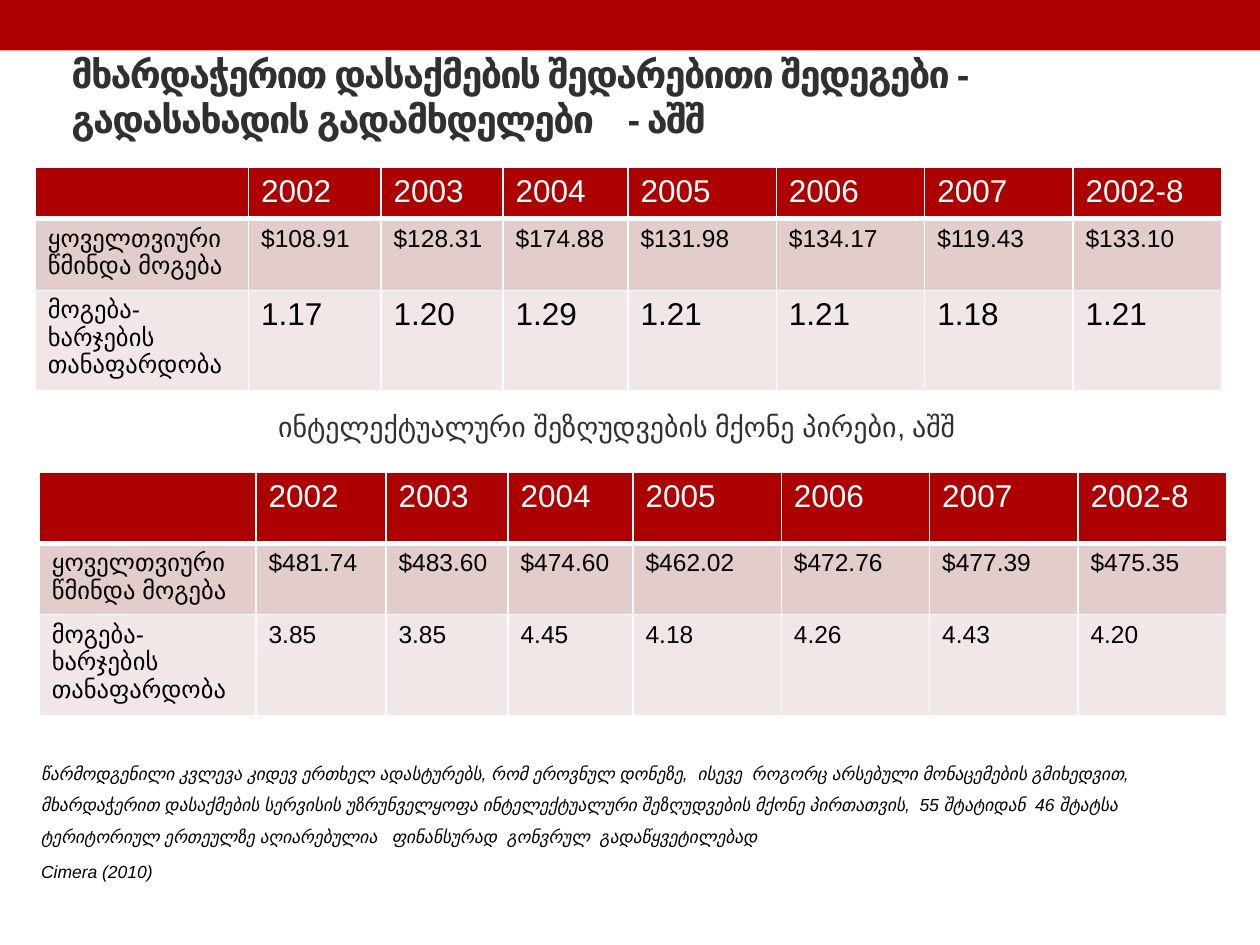
from lxml import etree
from pptx import Presentation
from pptx.dml.color import RGBColor
from pptx.enum.shapes import MSO_SHAPE
from pptx.enum.text import MSO_ANCHOR
from pptx.oxml.ns import qn
from pptx.util import Cm, Pt

RECT = MSO_SHAPE.RECTANGLE
MIDDLE = MSO_ANCHOR.MIDDLE
FONT = "Arial"
RED, WHITE, BLACK, GREY = "AD0101", "FFFFFF", "000000", "303030"
FILLS = [RED, "E3CCCC", "F1E7E7"]

YEARS = ["", "2002", "2003", "2004", "2005", "2006", "2007", "2002-8"]
GAIN = "ყოველთვიური წმინდა მოგება"
RATIO = "მოგება-ხარჯების  თანაფარდობა"
PAYERS = [
    YEARS,
    [GAIN, "$108.91", "$128.31", "$174.88", "$131.98", "$134.17", "$119.43", "$133.10"],
    [RATIO, "1.17", "1.20", "1.29", "1.21", "1.21", "1.18", "1.21"],
]
PEOPLE = [
    YEARS,
    [GAIN, "$481.74", "$483.60", "$474.60", "$462.02", "$472.76", "$477.39", "$475.35"],
    [RATIO, "3.85", "3.85", "4.45", "4.18", "4.26", "4.43", "4.20"],
]
TITLE = "მხარდაჭერით დასაქმების შედარებითი შედეგები - გადასახადის გადამხდელები    - აშშ"
LABEL = "ინტელექტუალური შეზღუდვების მქონე პირები, აშშ"
NOTES = [
    "წარმოდგენილი კვლევა კიდევ ერთხელ ადასტურებს, რომ ეროვნულ დონეზე,  ისევე  როგორც "
    "არსებული მონაცემების გმიხედვით,  მხარდაჭერით დასაქმების სერვისის უზრუნველყოფა "
    "ინტელექტუალური შეზღუდვების მქონე პირთათვის,  55 შტატიდან  46 შტატსა ტერიტორიულ "
    "ერთეულზე აღიარებულია   ფინანსურად  გონვრულ  გადაწყვეტილებად",
    "Cimera (2010)",
]


def color(code):
    return RGBColor.from_string(code)


def style(para, size, code, bold=False, italic=False):
    for run in para.runs:
        font = run.font
        font.name, font.size = FONT, Pt(size)
        font.bold, font.italic = bold, italic
        font.color.rgb = color(code)


def add_text(slide, box, lines, size, code, wrap=True, **look):
    frame = slide.shapes.add_textbox(*map(Cm, box)).text_frame
    frame.word_wrap = wrap
    frame.text = "\n".join(lines)
    for para in frame.paragraphs:
        style(para, size, code, **look)
    return frame


def add_band(slide, box):
    band = slide.shapes.add_shape(RECT, *map(Cm, box))
    band.shadow.inherit = False
    band.fill.solid()
    band.fill.fore_color.rgb = color(RED)
    band.line.fill.background()


def add_title(slide, box):
    frame = add_text(slide, box, [TITLE], 21.6, GREY, bold=True)
    frame.vertical_anchor = MIDDLE
    for run in frame.paragraphs[0].runs:
        run.font._element.set("spc", "-100")


def add_notes(slide, box):
    frame = add_text(slide, box, NOTES, 10, BLACK, italic=True)
    frame.margin_top = Cm(0.48)
    for para in frame.paragraphs:
        para.line_spacing = 1.5
        para.space_before = Pt(2)


def add_edges(cell, base):
    """Draw white borders; base is the bottom width in points."""
    props = cell._tc.get_or_add_tcPr()
    widths = {"a:lnL": 1, "a:lnR": 1, "a:lnT": 1, "a:lnB": base}
    for spot, (tag, width) in enumerate(widths.items()):
        line = etree.Element(qn(tag), w=str(Pt(width)))
        fill = etree.SubElement(line, qn("a:solidFill"))
        etree.SubElement(fill, qn("a:srgbClr"), val=WHITE)
        props.insert(spot, line)


def add_grid(slide, left, top, cols, rows, data, sizes):
    """Fill a table; sizes holds the text size of the values in each row."""
    box = map(Cm, (left, top, sum(cols), sum(rows)))
    table = slide.shapes.add_table(len(rows), len(cols), *box).table
    for col, width in zip(table.columns, cols):
        col.width = Cm(width)
    for r, (row, height) in enumerate(zip(table.rows, rows)):
        row.height = Cm(height)
        for c, cell in enumerate(row.cells):
            cell.fill.solid()
            cell.fill.fore_color.rgb = color(FILLS[r])
            add_edges(cell, 1 if r else 3)
            cell.text = data[r][c]
            size = sizes[r] if c else 14
            style(cell.text_frame.paragraphs[0], size, BLACK if r else WHITE)


def main():
    deck = Presentation()
    deck.slide_width, deck.slide_height = Cm(25.4), Cm(19.05)
    slide = deck.slides.add_slide(deck.slide_layouts[6])
    wide = [2.99] * 4
    add_band(slide, (0, 0, 25.4, 1.02))
    add_title(slide, (1.19, 0.99, 22.23, 1.88))
    add_notes(slide, (0.58, 14.68, 24.2, 4.37))
    add_grid(slide, 0.71, 3.38, [4.3, 2.67, 2.46, 2.52] + wide,
             [1.03, 1.36, 1.92], PAYERS, [18, 14, 18])
    add_grid(slide, 0.79, 9.53, [4.37, 2.62, 2.46, 2.52] + wide,
             [1.42, 1.36, 1.92], PEOPLE, [18, 14, 14])
    add_text(slide, (5.36, 8.13, 14.35, 0.94), [LABEL], 16, GREY, wrap=False)
    deck.save("out.pptx")


if __name__ == "__main__":
    main()
